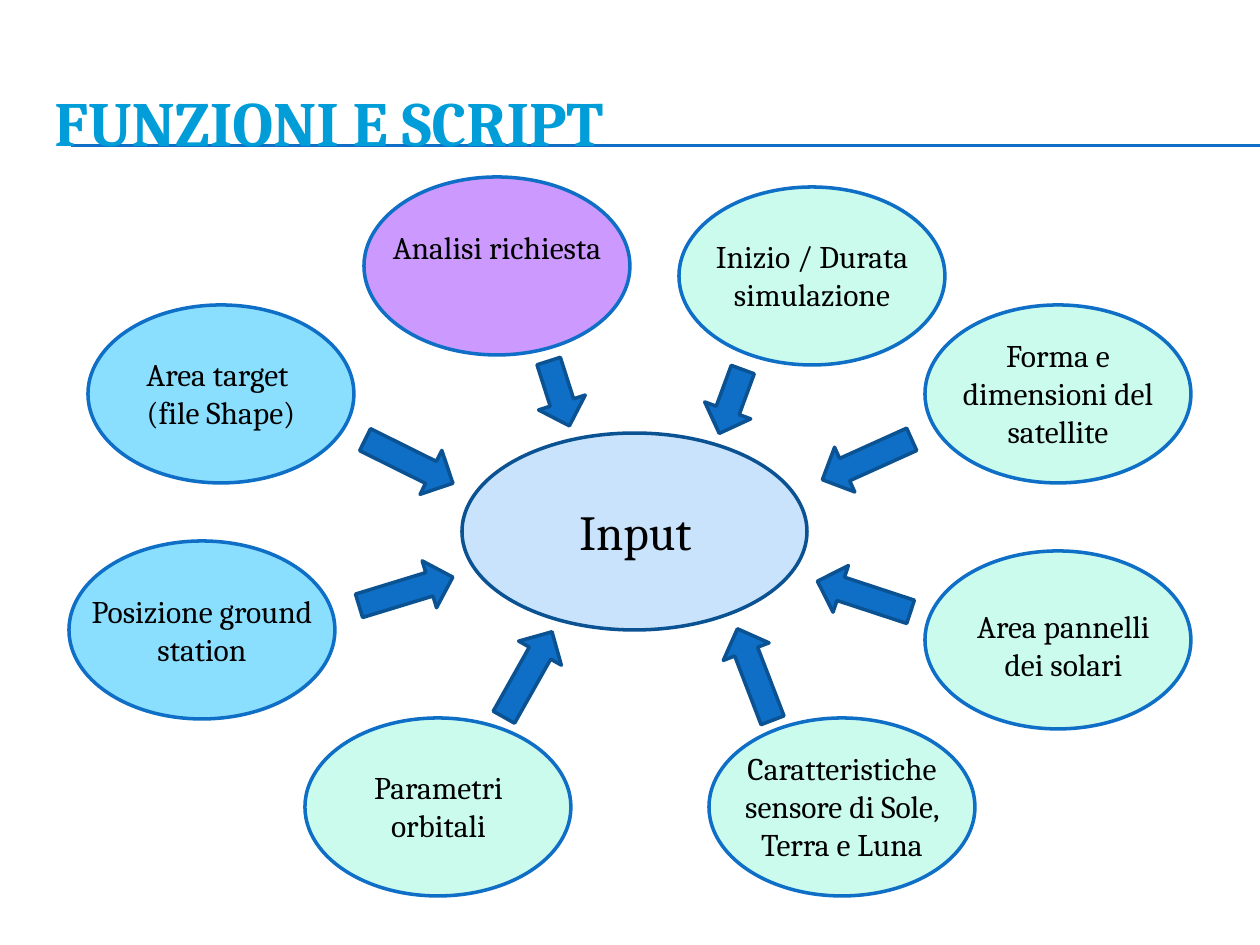
"""Build the slide of the inputs that feed the simulation functions and scripts."""
import pptx
import pptx.util
import pptx.dml.color
import pptx.enum.shapes
import pptx.enum.text
import pptx.oxml.ns
import lxml.etree

PX = 914400 / 126
SHAPE = pptx.enum.shapes.MSO_SHAPE
ALIGN = pptx.enum.text.PP_ALIGN
ANCHOR = pptx.enum.text.MSO_ANCHOR
COLORS = {
    "title": "009DD9", "text": "000000", "blue": "0F6FC6", "navy": "0B5292",
    "hub": "C8E3FB", "ground": "8ADFFF", "satellite": "CAFBED", "analysis": "CC99FF",
}

deck = pptx.Presentation()
deck.slide_width = pptx.util.Inches(10)
deck.slide_height = pptx.util.Inches(7.5)
slide = deck.slides.add_slide(deck.slide_layouts[6])


def add_text(text, box, size=18, color="text", bold=False, align=ALIGN.CENTER, anchor=ANCHOR.TOP):
    frame = slide.shapes.add_textbox(*[round(v * PX) for v in box]).text_frame
    frame.word_wrap = True
    frame.vertical_anchor = anchor
    frame.text = text
    for paragraph in frame.paragraphs:
        paragraph.alignment = align
        paragraph.font.name = "Cambria"
        paragraph.font.size = pptx.util.Pt(size)
        paragraph.font.bold = bold
        paragraph.font.color.rgb = pptx.dml.color.RGBColor.from_string(COLORS[color])


def add_figure(preset, box, fill, line, rotation=0):
    figure = slide.shapes.add_shape(preset, *[round(v * PX) for v in box])
    figure.shadow.inherit = False
    figure.fill.solid()
    figure.fill.fore_color.rgb = pptx.dml.color.RGBColor.from_string(COLORS[fill])
    figure.line.color.rgb = pptx.dml.color.RGBColor.from_string(COLORS[line])
    figure.line.width = pptx.util.Pt(2)
    figure.rotation = rotation


for rule_y in (145, 146):
    rule = slide.shapes.add_connector(
        pptx.enum.shapes.MSO_CONNECTOR.STRAIGHT,
        *[round(v * PX) for v in (71, rule_y, 1260, rule_y)])
    rule.line.color.rgb = pptx.dml.color.RGBColor.from_string(COLORS["blue"])
    rule.line.width = pptx.util.Pt(0.75)
    lxml.etree.SubElement(rule._element.spPr, pptx.oxml.ns.qn("a:effectLst"))

add_text("FUNZIONI E SCRIPT", (42, 63, 1197, 116), size=36, color="title", bold=True,
         align=ALIGN.LEFT, anchor=ANCHOR.MIDDLE)

add_figure(SHAPE.OVAL, (462, 433, 345, 197), "hub", "navy")
add_text("Input", (517, 495, 237, 72), size=28)

inputs = [
    ("Analisi richiesta", "analysis", 364, 177, (374, 222, 246, 89)),
    ("Inizio / Durata simulazione", "satellite", 679, 187, (689, 231, 246, 89)),
    ("Forma e dimensioni del satellite", "satellite", 925, 305, (935, 330, 246, 127)),
    ("Area pannelli dei solari", "satellite", 925, 551, (945, 601, 237, 89)),
    ("Caratteristiche sensore di Sole, Terra e Luna", "satellite", 709, 718, (709, 743, 266, 127)),
    ("Parametri orbitali", "satellite", 305, 718, (325, 762, 227, 89)),
    ("Posizione ground station", "ground", 69, 541, (69, 586, 266, 89)),
    ("Area target \n(file Shape)", "ground", 88, 305, (88, 349, 266, 89)),
]
for label, group, left, top, label_box in inputs:
    add_figure(SHAPE.OVAL, (left, top, 266, 178), group, "blue")
    add_text(label, label_box)

arrows = [
    (525, 369, 68, 72.3), (697, 377, 68, 110.2), (818, 435, 98, 155.7), (815, 572, 98, 198.2),
    (706, 650, 98, 249), (479, 650, 98, 299.4), (357, 567, 98, 343), (360, 437, 98, 26.4),
]
for left, top, length, angle in arrows:
    add_figure(SHAPE.RIGHT_ARROW, (left, top, length, 49), "blue", "navy", angle)

deck.save("out.pptx")
